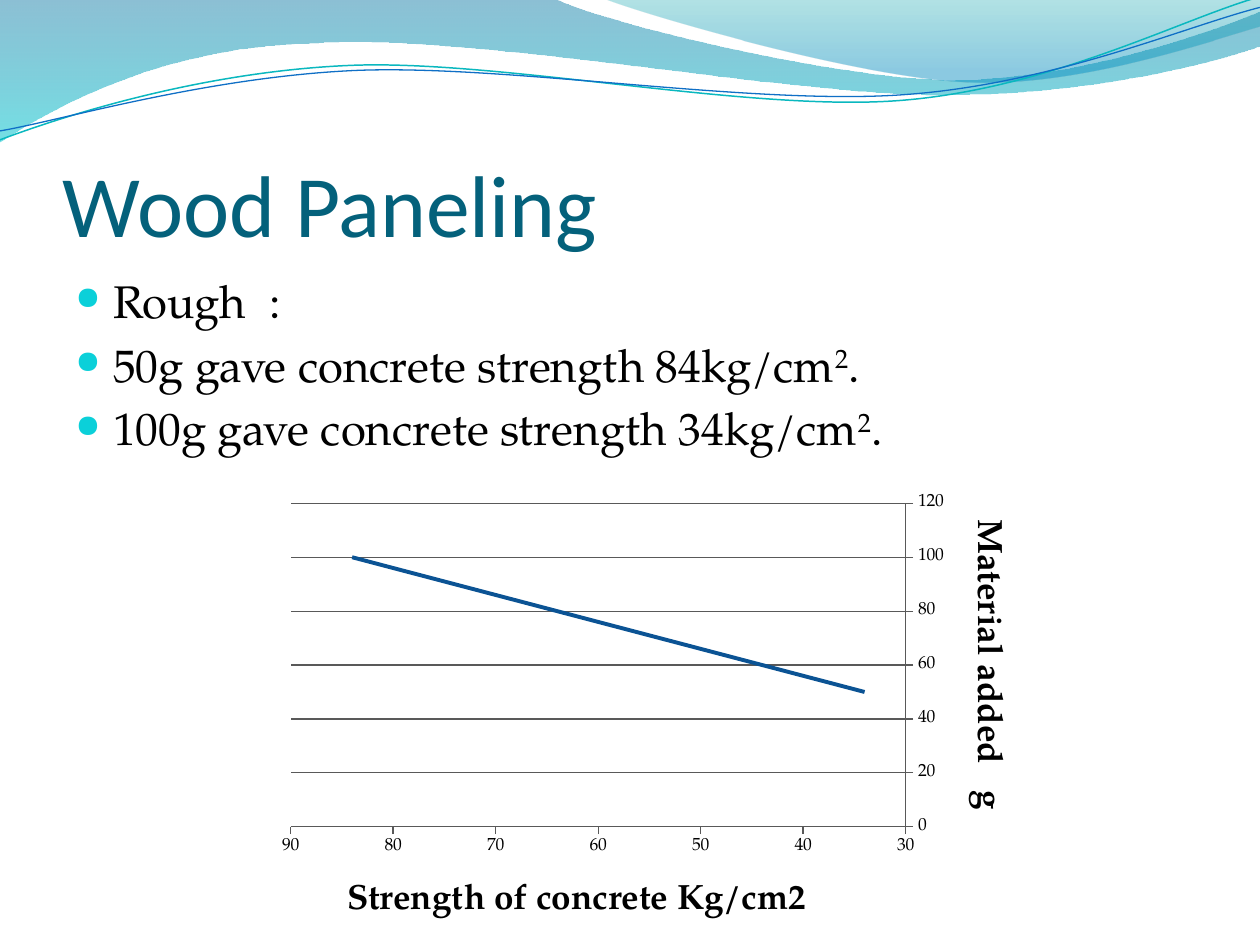
from pptx import Presentation
from pptx.chart.data import XyChartData
from pptx.dml.color import RGBColor
from pptx.enum.chart import XL_CHART_TYPE, XL_TICK_MARK
from pptx.enum.text import MSO_ANCHOR, PP_ALIGN
from pptx.oxml import parse_xml
from pptx.oxml.ns import nsdecls, qn
from pptx.oxml.xmlchemy import OxmlElement
from pptx.util import Cm, Pt

SMOOTH_SCATTER = XL_CHART_TYPE.XY_SCATTER_SMOOTH_NO_MARKERS
TICK_OUTSIDE = XL_TICK_MARK.OUTSIDE
TOP, BOTTOM = MSO_ANCHOR.TOP, MSO_ANCHOR.BOTTOM
LEFT, RIGHT = PP_ALIGN.LEFT, PP_ALIGN.RIGHT


def color(value):
    return RGBColor.from_string(value)


class SlideBuilder:
    serif = "TeX Gyre Pagella"
    sans = "Calibri"
    ink = "000000"
    title_color = "04617B"
    bullet_color = "0BD0D9"
    strand_color = "0F6FC6"
    series_color = "0B5394"
    axis_color = "595959"

    def __init__(self, slide):
        self.slide = slide

    def outline(self, start, segments, close):
        points = [(Cm(x), Cm(y)) for segment in segments
                  for x, y in zip(segment[::2], segment[1::2])]
        builder = self.slide.shapes.build_freeform(Cm(start[0]), Cm(start[1]))
        builder.add_line_segments(points, close=close)
        shape = builder.convert_to_shape()
        shape.shadow.inherit = False
        self.bend(shape, segments)
        return shape

    def bend(self, shape, segments):
        lines = iter(list(shape._element.iter(qn("a:lnTo"))))
        for segment in segments:
            group = [next(lines) for _ in segment[::2]]
            if len(group) == 3:
                curve = OxmlElement("a:cubicBezTo")
                group[0].addprevious(curve)
                for line in group:
                    curve.append(line[0])
                    line.getparent().remove(line)

    def wave(self, start, segments, stops):
        shape = self.outline(start, segments, True)
        shape.line.fill.background()
        shape.fill.gradient()
        shape.fill.gradient_angle = 270
        for stop, (position, value, opacity) in zip(shape.fill.gradient_stops, stops):
            stop.position = position
            stop.color.rgb = color(value)
        tones = list(shape._element.spPr.iter(qn("a:srgbClr")))
        for tone, (position, value, opacity) in zip(tones, stops):
            alpha = OxmlElement("a:alpha")
            alpha.set("val", str(opacity * 1000))
            tone.append(alpha)

    def strand(self, start, segments, value, width):
        shape = self.outline(start, segments, False)
        shape.fill.background()
        shape.line.color.rgb = color(value)
        shape.line.width = Pt(width)

    def style(self, font, size, name, value, bold=False):
        font.size = Pt(size)
        font.name = name
        font.bold = bold
        font.color.rgb = color(value)

    def frame(self, left, top, width, height, anchor=TOP):
        box = self.slide.shapes.add_textbox(Cm(left), Cm(top), Cm(width), Cm(height))
        box.text_frame.word_wrap = True
        box.text_frame.vertical_anchor = anchor
        return box

    def label(self, text, place, size, name, value, bold=False,
              align=LEFT, anchor=TOP, rotation=0):
        box = self.frame(*place, anchor)
        box.rotation = rotation
        box.text_frame.text = text
        para = box.text_frame.paragraphs[0]
        para.alignment = align
        self.style(para.runs[0].font, size, name, value, bold)
        return box

    def title(self, text, place):
        text_frame = self.label(text, place, 50, self.sans, self.title_color,
                                anchor=BOTTOM).text_frame
        text_frame.margin_left = text_frame.margin_right = text_frame.margin_bottom = 0

    def axis_title(self, text, place, rotation=0):
        self.label(text, place, 20, self.serif, self.ink, True, RIGHT, rotation=rotation)

    def bullets(self, items, place):
        text_frame = self.frame(*place).text_frame
        for index, parts in enumerate(items):
            para = text_frame.add_paragraph() if index else text_frame.paragraphs[0]
            para.space_before = Pt(5.2)
            for position, part in enumerate(parts):
                span = para.add_run()
                span.text = part
                self.style(span.font, 26, self.serif, self.ink)
                if position == 1:
                    span.font._element.set("baseline", "30000")
            self.bullet(para)

    def bullet(self, para):
        properties = para._p.get_or_add_pPr()
        properties.set("marL", str(Cm(0.76)))
        properties.set("indent", str(Cm(-0.76)))
        for xml in (f'<a:buClr {nsdecls("a")}><a:srgbClr val="{self.bullet_color}"/></a:buClr>',
                    f'<a:buSzPct {nsdecls("a")} val="70000"/>',
                    f'<a:buChar {nsdecls("a")} char="●"/>'):
            properties.append(parse_xml(xml))

    def axis(self, axis, grid):
        axis.major_tick_mark = TICK_OUTSIDE
        axis.has_major_gridlines = grid
        lines = [axis.format.line]
        if grid:
            lines.append(axis.major_gridlines.format.line)
        for line in lines:
            line.color.rgb = color(self.axis_color)
            line.width = Pt(0.75)

    def scatter(self, points, place):
        data = XyChartData()
        series_data = data.add_series("Series 1")
        for x, y in points:
            series_data.add_data_point(x, y)
        chart = self.slide.shapes.add_chart(
            SMOOTH_SCATTER, *(Cm(length) for length in place), data).chart
        chart.has_legend = False
        chart.has_title = False
        self.style(chart.font, 10, self.serif, self.ink)
        self.axis(chart.category_axis, False)
        self.axis(chart.value_axis, True)
        chart.category_axis.reverse_order = True
        plot = chart.plots[0]
        plot.vary_by_categories = False
        series = plot.series[0]
        series.smooth = True
        series.format.line.color.rgb = color(self.series_color)
        series.format.line.width = Pt(2.25)
        self.plot_area(chart, x=5.2, y=2.8, w=86.1, h=83.6)

    def plot_area(self, chart, **percents):
        area = chart._chartSpace.chart.plotArea
        for old in area.findall(qn("c:layout")):
            area.remove(old)
        sizes = "".join(f'<c:{key} val="{value / 100:.3f}"/>'
                        for key, value in percents.items())
        area.insert(0, parse_xml(
            f'<c:layout {nsdecls("c")}><c:manualLayout><c:layoutTarget val="inner"/>'
            f'<c:xMode val="edge"/><c:yMode val="edge"/>{sizes}</c:manualLayout></c:layout>'))


def main():
    deck = Presentation()
    deck.slide_width, deck.slide_height = Cm(25.4), Cm(19.05)
    page = SlideBuilder(deck.slides.add_slide(deck.slide_layouts[6]))

    page.wave((0, 0), [(11.18, -0.03), (12.09, 0.43, 16.87, 1.6, 19.25, 1.6),
                       (21.67, 1.6, 24.33, 0.66, 25.4, 0.23), (25.43, 0.91),
                       (24.97, 1.12, 22.1, 1.93, 18.95, 1.91),
                       (15.8, 1.91, 9.7, 0.71, 6.53, 0.86),
                       (3.28, 0.91, 1.17, 2.11, -0.03, 2.87)],
              [(0, "0074A1", 45), (1, "00C6CF", 55)])
    page.wave((12.17, -0.03), [(12.93, 0.28, 17.32, 1.57, 19.53, 1.65),
                               (21.74, 1.75, 24.41, 0.81, 25.4, 0.53), (25.4, 0)],
              [(0, "00A1A9", 30), (0.8, "008BBF", 45)])
    page.strand((0, 2.82), [(1.22, 2.36, 4.01, 1.45, 7.04, 1.32),
                            (10.03, 1.19, 15.06, 2.26, 18.11, 2.03),
                            (21.16, 1.8, 23.83, 0.38, 25.35, -0.05)], "0AB8BF", 0.85)
    page.strand((0, 2.64), [(1.19, 2.44, 4.17, 1.55, 7.19, 1.42),
                            (10.24, 1.3, 15.16, 2.13, 18.21, 1.91),
                            (21.23, 1.7, 23.9, 0.53, 25.4, 0.15)], page.strand_color, 0.75)

    page.title("Wood Paneling", (1.27, 1.96, 22.86, 3.18))
    page.bullets([("Rough  :",),
                  ("50g gave concrete strength 84kg/cm", "2", "."),
                  ("100g gave concrete strength 34kg/cm", "2", ".")],
                 (1.27, 5.38, 22.86, 12.19))
    page.scatter([(34, 50), (84, 100)], (5.11, 9.93, 14.4, 7.8))
    page.axis_title("Strength of concrete Kg/cm2", (5.51, 17.5, 11, 1.12))
    page.axis_title("Material added   g", (16.38, 12.4, 7.24, 1.12), 90)

    deck.save("out.pptx")


if __name__ == "__main__":
    main()
